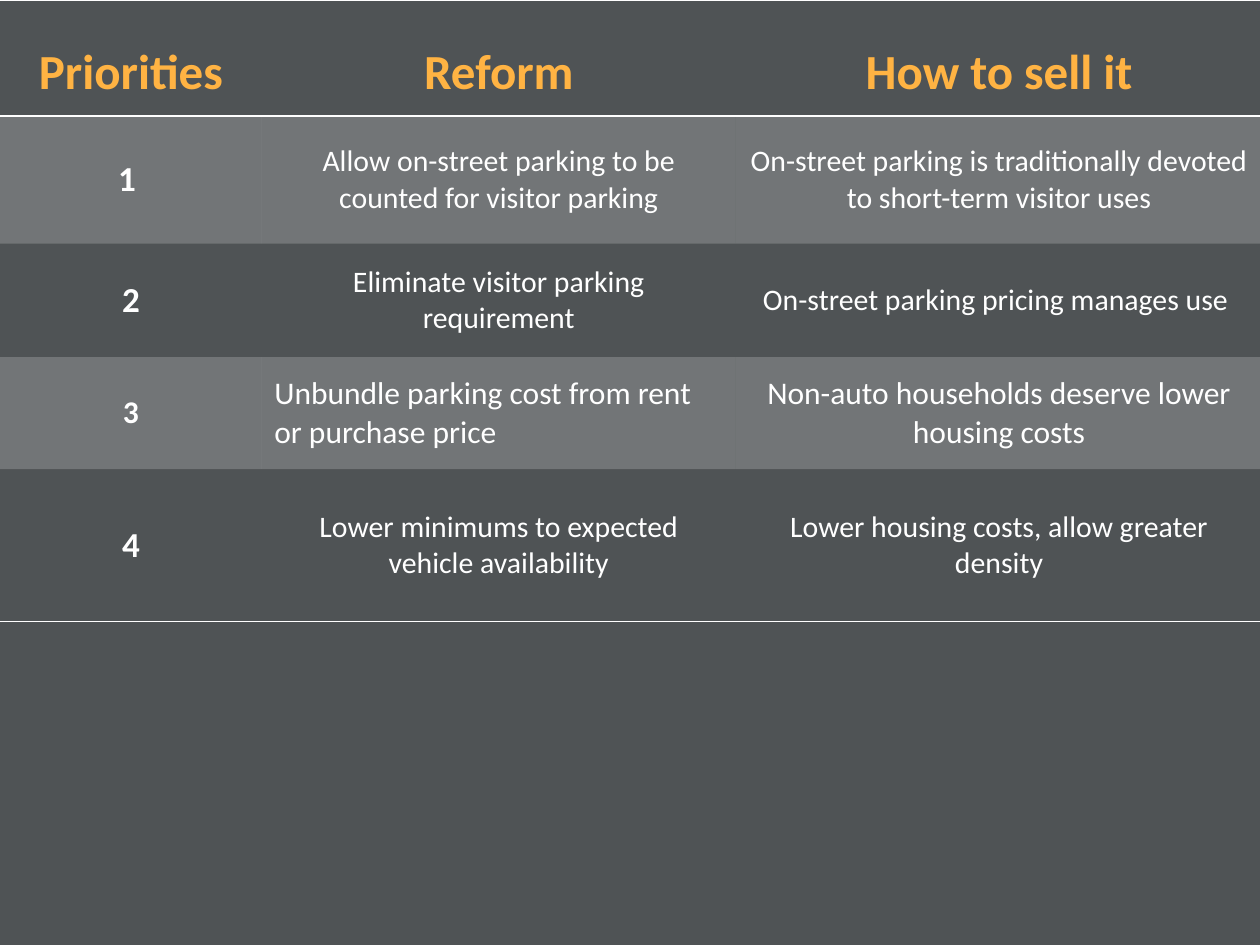
"""Build a slide with a table of parking reform priorities."""
import lxml.etree
import pptx
import pptx.dml.color
import pptx.enum.text
import pptx.oxml.ns
import pptx.util

Cm = pptx.util.Cm
Pt = pptx.util.Pt
RGBColor = pptx.dml.color.RGBColor
ALIGN = pptx.enum.text.PP_ALIGN
MIDDLE = pptx.enum.text.MSO_ANCHOR.MIDDLE
qn = pptx.oxml.ns.qn

SLATE = RGBColor(0x4F, 0x53, 0x55)
AMBER = RGBColor(0xFF, 0xB3, 0x43)
WHITE = RGBColor(0xFF, 0xFF, 0xFF)
NO_STYLE = "{2D5ABB26-0587-4C30-8999-92F81FD0307C}"
BAND_ALPHA = 20

COLUMN_WIDTHS = [Cm(5.28), Cm(9.55), Cm(10.62)]
ROW_HEIGHTS = [Cm(2.34), Cm(2.57), Cm(2.29), Cm(2.26), Cm(3.07)]
HEADERS = ["Priorities", "Reform", "How to sell it"]
REFORMS = [
    ("1 ", "Allow on-street parking to be counted for visitor parking",
     "On-street parking is traditionally devoted to short-term visitor uses"),
    ("2", "Eliminate visitor parking requirement",
     "On-street parking pricing manages use "),
    ("3", "Unbundle parking cost from rent or purchase price",
     "Non-auto households deserve lower housing costs"),
    ("4", "Lower minimums to expected vehicle availability",
     "Lower housing costs, allow greater density"),
]
UNBUNDLE_ROW = 3


def set_values(target, values):
    """Set each named attribute of the target."""
    for name, value in values.items():
        setattr(target, name, value)


def write_cell(cell, text, font, paragraph_format, margins):
    """Write centred, formatted text into a cell."""
    side, end = margins
    set_values(cell, {"text": text, "vertical_anchor": MIDDLE,
                      "margin_left": side, "margin_right": side,
                      "margin_top": end, "margin_bottom": end})
    paragraph = cell.text_frame.paragraphs[0]
    set_values(paragraph, paragraph_format)
    run_font = paragraph.runs[0].font
    set_values(run_font, {"name": "Calibri", "size": font["size"], "bold": font["bold"]})
    run_font.color.rgb = font["color"]


def fill_cell(cell, banded):
    """Give a banded cell a translucent white fill and any other cell none."""
    if not banded:
        cell.fill.background()
        return
    cell.fill.solid()
    cell.fill.fore_color.rgb = WHITE
    color = cell._tc.tcPr.find(".//" + qn("a:srgbClr"))
    lxml.etree.SubElement(color, qn("a:alpha"), val=str(BAND_ALPHA * 1000))


def add_borders(cell, sides):
    """Draw white one-point lines on the given sides of a cell."""
    for position, side in enumerate(sides):
        line = lxml.etree.Element(qn("a:ln" + side), w=str(Pt(1)))
        solid = lxml.etree.SubElement(line, qn("a:solidFill"))
        lxml.etree.SubElement(solid, qn("a:srgbClr"), val=str(WHITE))
        cell._tc.tcPr.insert(position, line)


def add_plain_table(slide):
    """Add an unstyled table with the column widths and row heights set."""
    frame = slide.shapes.add_table(len(ROW_HEIGHTS), len(COLUMN_WIDTHS), Cm(0), Cm(0),
                                   sum(COLUMN_WIDTHS), sum(ROW_HEIGHTS))
    table = frame.table
    table._tbl.tblPr.find(qn("a:tableStyleId")).text = NO_STYLE
    for column, width in zip(table.columns, COLUMN_WIDTHS):
        column.width = width
    for row, height in zip(table.rows, ROW_HEIGHTS):
        row.height = height
    return table


def fill_header(table):
    """Write the header row between two lines."""
    for column, text in enumerate(HEADERS):
        cell = table.cell(0, column)
        write_cell(cell, text, {"size": Pt(28), "bold": True, "color": AMBER},
                   {"alignment": ALIGN.CENTER, "line_spacing": 1.5}, (Cm(0.13), Cm(0)))
        fill_cell(cell, False)
        add_borders(cell, "TB")


def fill_reforms(table):
    """Write the reform rows with bands on the odd ones."""
    for row, texts in enumerate(REFORMS, start=1):
        unbundle = row == UNBUNDLE_ROW
        number_size, text_size = (Pt(18), Pt(18)) if unbundle else (Pt(20), Pt(17))
        for column, text in enumerate(texts):
            cell = table.cell(row, column)
            is_number = column == 0
            font = {"size": number_size if is_number else text_size,
                    "bold": is_number, "color": WHITE}
            alignment = ALIGN.LEFT if unbundle and column == 1 else ALIGN.CENTER
            write_cell(cell, text, font, {"alignment": alignment}, (Cm(0.25), Cm(0.25)))
            fill_cell(cell, row % 2 == 1)
            if row == len(REFORMS):
                add_borders(cell, "B")


def main():
    """Build and save the presentation."""
    presentation = pptx.Presentation()
    set_values(presentation, {"slide_width": Cm(25.4), "slide_height": Cm(19.05)})
    slide = presentation.slides.add_slide(presentation.slide_layouts[6])
    slide.background.fill.solid()
    slide.background.fill.fore_color.rgb = SLATE
    table = add_plain_table(slide)
    fill_header(table)
    fill_reforms(table)
    presentation.save("out.pptx")


if __name__ == "__main__":
    main()
